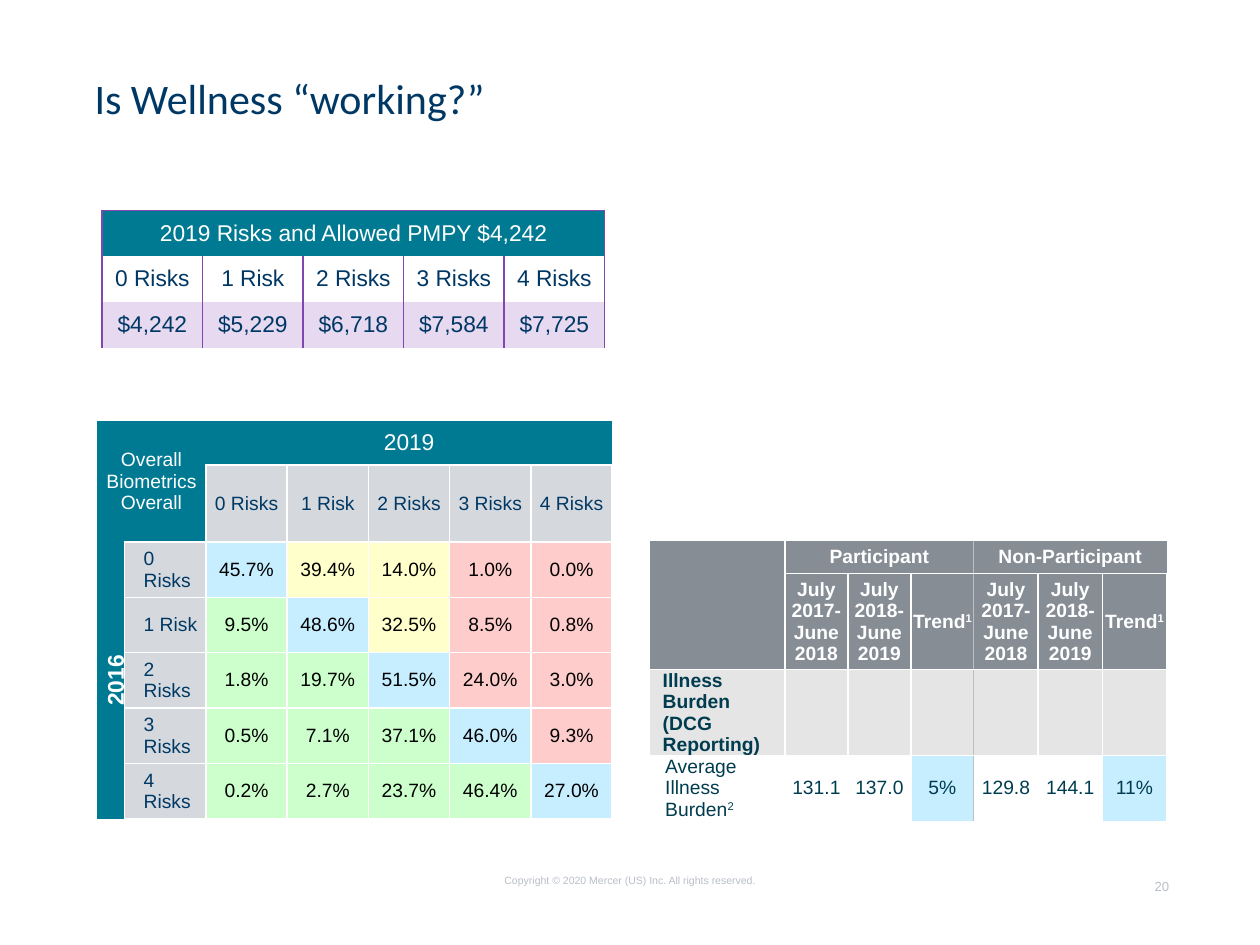
from lxml import etree
from pptx import Presentation
from pptx.dml.color import RGBColor
from pptx.enum.text import MSO_ANCHOR, PP_ALIGN
from pptx.oxml.ns import qn
from pptx.util import Inches, Pt

LEFT, CENTER, RIGHT = PP_ALIGN.LEFT, PP_ALIGN.CENTER, PP_ALIGN.RIGHT
TOP, MIDDLE = MSO_ANCHOR.TOP, MSO_ANCHOR.MIDDLE
SLIDE_W, SLIDE_H = Inches(10), Inches(7.5)
NO_STYLE = "{2D5ABB26-0587-4C30-8999-92F81FD0307C}"
WHITE, BLACK, NAVY, INK = "FFFFFF", "000000", "003865", "003C50"
TEAL, PURPLE, LILAC = "007A92", "8246AF", "E6D9F0"
SILVER, PALE, SLATE, MIST = "D5D9DD", "E5E5E5", "868D95", "B9BFC7"
BLUE, GREEN, YELLOW, RED = "C6EEFF", "CCFFCC", "FFFFCC", "FFCCCC"
RISKS = ["0 Risks", "1 Risk", "2 Risks", "3 Risks", "4 Risks"]
COSTS = ["$4,242", "$5,229", "$6,718", "$7,584", "$7,725"]
MIGRATION = [
    ["45.7%", "39.4%", "14.0%", "1.0%", "0.0%"],
    ["9.5%", "48.6%", "32.5%", "8.5%", "0.8%"],
    ["1.8%", "19.7%", "51.5%", "24.0%", "3.0%"],
    ["0.5%", "7.1%", "37.1%", "46.0%", "9.3%"],
    ["0.2%", "2.7%", "23.7%", "46.4%", "27.0%"],
]
PERIODS = ["July 2017- June 2018", "July 2018- June 2019", "Trend^1"]
BURDEN = ["131.1", "137.0", "5%", "129.8", "144.1", "11%"]


def rgb(color):
    """Turn a hex string into a colour."""
    return RGBColor.from_string(color)


def across(share):
    """Length for a percentage of the slide's width."""
    return int(SLIDE_W * share / 100)


def down(share):
    """Length for a percentage of the slide's height."""
    return int(SLIDE_H * share / 100)


def write(tf, text, size=11, color=NAVY, bold=False, align=CENTER,
          font="Arial", indent=0, anchor=TOP, margins=(0, 0, 0, 0)):
    """Fill a frame: newlines part paragraphs, a caret starts a superscript."""
    tf.margin_left, tf.margin_top, tf.margin_right, tf.margin_bottom = map(Inches, margins)
    tf.vertical_anchor = anchor
    for i, line in enumerate(text.split("\n")):
        p = tf.add_paragraph() if i else tf.paragraphs[0]
        p.alignment = align
        if indent:
            p._p.get_or_add_pPr().set("marL", str(Inches(indent)))
        for raised, part in enumerate(line.split("^")):
            r = p.add_run()
            r.text = part
            r.font.name, r.font.size, r.font.bold = font, Pt(size), bold
            r.font.color.rgb = rgb(color)
            if raised:
                r.font._element.set("baseline", "30000")


def add_label(slide, text, left, top, width, height, wrap=True, **fmt):
    """Add a text box placed in percentages of the slide."""
    s = slide.shapes.add_textbox(across(left), down(top), across(width), down(height))
    write(s.text_frame, text, **fmt)
    s.text_frame.word_wrap = wrap


def add_grid(slide, left, top, cols, rows):
    """Add an unstyled table with columns and rows in percentages of the slide."""
    table = slide.shapes.add_table(len(rows), len(cols), across(left), down(top),
                                   across(sum(cols)), down(sum(rows))).table
    table.first_row = table.horz_banding = False
    table._tbl.tblPr.find(qn("a:tableStyleId")).text = NO_STYLE
    for col, share in zip(table.columns, cols):
        col.width = across(share)
    for row, share in zip(table.rows, rows):
        row.height = down(share)
    return table


def draw_borders(cell, borders):
    """Draw cell borders from a mapping of side to colour and width."""
    tc_pr = cell._tc.get_or_add_tcPr()
    sides = [side for side in "LRTB" if side in borders]
    for i, side in enumerate(sides):
        color, width = borders[side]
        ln = etree.Element(qn(f"a:ln{side}"), w=str(Pt(width)))
        fill = etree.SubElement(ln, qn("a:solidFill"))
        etree.SubElement(fill, qn("a:srgbClr"), val=color)
        tc_pr.insert(i, ln)


def set_cell(table, row, col, text="", fill=None, span=(1, 1), borders=None,
             margins=(0, 0, 0, 0), **fmt):
    """Merge, fill, border and write one cell."""
    cell = table.cell(row, col)
    if span != (1, 1):
        cell.merge(table.cell(row + span[0] - 1, col + span[1] - 1))
    if fill:
        cell.fill.solid()
        cell.fill.fore_color.rgb = rgb(fill)
    else:
        cell.fill.background()
    draw_borders(cell, borders or {})
    if text:
        write(cell.text_frame, text, **fmt)
    cell.margin_left, cell.margin_top, cell.margin_right, cell.margin_bottom = map(Inches, margins)
    cell.vertical_anchor = MIDDLE
    return cell


def edges(sides, color=WHITE, width=1):
    """Give the same line to each named side."""
    return {side: (color, width) for side in sides}


def migration_color(row, col):
    """Colour a share by whether risks fell, stayed or rose."""
    if col == row:
        return BLUE
    if col < row:
        return GREEN
    return YELLOW if col <= 2 else RED


def add_cost_table(slide):
    """Allowed cost by number of risks."""
    table = add_grid(slide, 8.1, 22.27, [7.98] * 5, [4.84] * 3)
    pad = (0.1, 0.05, 0.1, 0.05)
    set_cell(table, 0, 0, "2019 Risks and Allowed PMPY $4,242", TEAL, (1, 5),
             edges("LRT", PURPLE), pad, size=13, color=WHITE)
    for row, (texts, fill) in enumerate([(RISKS, None), (COSTS, LILAC)], 1):
        for col, text in enumerate(texts):
            set_cell(table, row, col, text, fill, borders=edges("LR", PURPLE),
                     margins=pad, size=13)


def add_migration_table(slide):
    """Movement between risk counts from 2016 to 2019."""
    table = add_grid(slide, 7.7, 44.53, [2.2] + [6.45] * 6, [4.7, 8] + [5.8] * 5)
    pad = (0.05,) * 4
    set_cell(table, 0, 0, "Overall Biometrics Overall", TEAL, (2, 2), margins=pad, color=WHITE)
    set_cell(table, 0, 2, "2019", TEAL, (1, 5), edges("B"), pad, size=13, color=WHITE)
    year = set_cell(table, 2, 0, "2016", TEAL, (5, 1), edges("R"), pad,
                    size=13, color=WHITE, bold=True)
    year._tc.get_or_add_tcPr().set("vert", "vert270")
    for i, risk in enumerate(RISKS):
        set_cell(table, 1, i + 2, risk, SILVER, borders=edges("LRTB"), margins=pad)
        set_cell(table, i + 2, 1, risk, SILVER, borders=edges("LRTB"), margins=pad,
                 align=LEFT, indent=0.1)
        for j, share in enumerate(MIGRATION[i]):
            set_cell(table, i + 2, j + 2, share, migration_color(i, j),
                     borders=edges("LRTB"), color=BLACK)


def add_burden_table(slide):
    """Illness burden of participants and non-participants."""
    table = add_grid(slide, 51.6, 57.2, [10.7] + [5] * 3 + [5.1] * 3, [3.5, 10.16, 9.1, 6.9])
    head = {"color": WHITE, "bold": True}
    divider = (MIST, 0.75)
    set_cell(table, 0, 0, fill=SLATE, span=(2, 1), borders=edges("RB"))
    set_cell(table, 0, 1, "Participant", SLATE, (1, 3), {**edges("LB"), "R": divider}, **head)
    set_cell(table, 0, 4, "Non-Participant", SLATE, (1, 3), {**edges("B"), "L": divider}, **head)
    set_cell(table, 2, 0, "Illness Burden\n(DCG Reporting)", PALE, borders=edges("RTB"),
             color=INK, bold=True, align=LEFT, indent=0.1)
    set_cell(table, 3, 0, "Average Illness Burden^2", borders=edges("RT"),
             margins=(0.12, 0, 0, 0), color=INK, align=LEFT)
    for col, (period, value) in enumerate(zip(PERIODS * 2, BURDEN), 1):
        lines = edges("LRTB")
        if col in (3, 4):
            lines["R" if col == 3 else "L"] = divider
        open_lines = {side: line for side, line in lines.items() if side != "B"}
        set_cell(table, 1, col, period, SLATE, borders=lines, **head)
        set_cell(table, 2, col, fill=PALE, borders=lines)
        set_cell(table, 3, col, value, BLUE if col % 3 == 0 else None,
                 borders=open_lines, color=INK)


def main():
    """Build and save the slide."""
    prs = Presentation()
    prs.slide_width, prs.slide_height = SLIDE_W, SLIDE_H
    slide = prs.slides.add_slide(prs.slide_layouts[5])
    title = slide.shapes.title
    title.left, title.top, title.width, title.height = (
        across(7.5), down(8.27), across(82.9), down(13.87))
    write(title.text_frame, "Is Wellness “working?”", size=24, font="Calibri", align=LEFT)
    title.text_frame.paragraphs[0].line_spacing = 0.9
    add_cost_table(slide)
    add_migration_table(slide)
    add_burden_table(slide)
    add_label(slide, "Copyright © 2020 Mercer (US) Inc. All rights reserved.",
              32.8, 92.53, 34.4, 4, wrap=False, size=6, color=MIST)
    add_label(slide, "20", 87.2, 92.93, 5.6, 4, size=7.5, color=MIST, align=RIGHT)
    prs.save("out.pptx")


if __name__ == "__main__":
    main()
